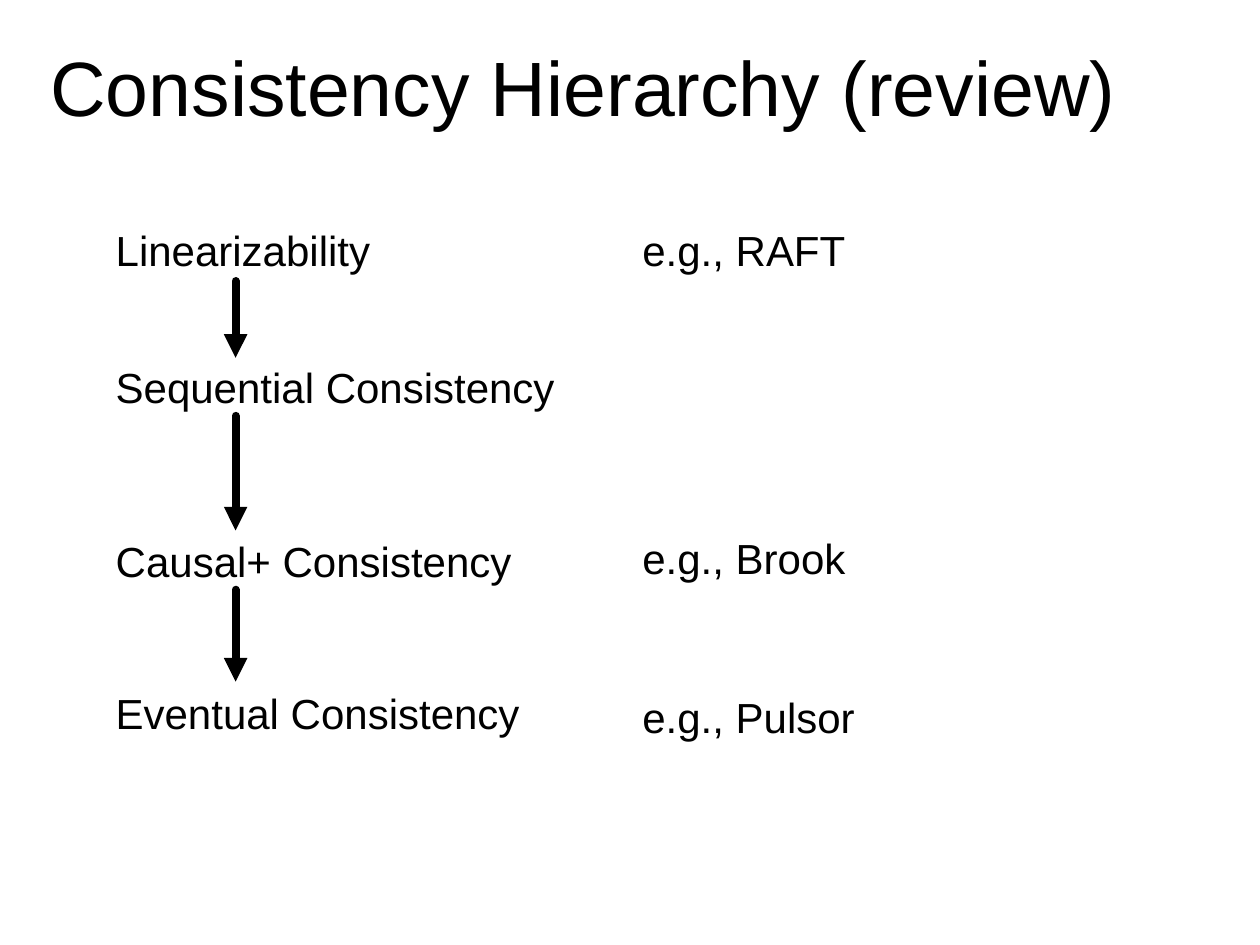
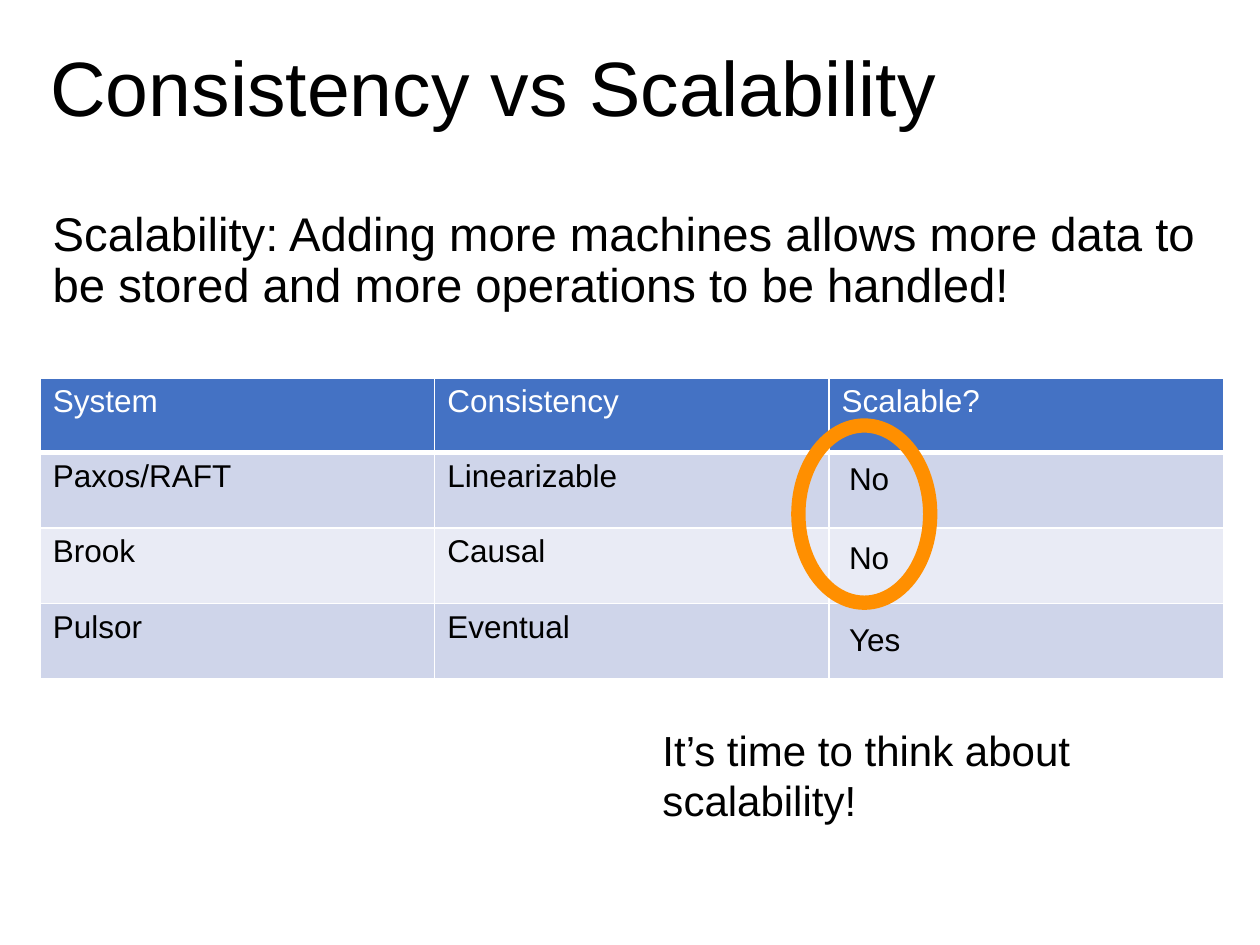
from lxml.etree import SubElement
from pptx import Presentation
from pptx.dml.color import RGBColor
from pptx.enum.shapes import MSO_CONNECTOR as CONNECTOR, MSO_SHAPE as SHAPE
from pptx.enum.text import MSO_ANCHOR as ANCHOR, MSO_AUTO_SIZE as AUTO_SIZE, PP_ALIGN as ALIGN
from pptx.oxml.ns import qn
from pptx.util import Inches, Pt

FONT = "Arial"
COLORS = {
    "text": "000000",
    "paper": "FFFFFF",
    "header": "4472C4",
    "odd_row": "CFD5EA",
    "even_row": "E9EBF5",
    "ring": "FF8F00",
}
TITLE_ONLY = 5


def color(name):
    return RGBColor.from_string(COLORS[name])


def box(left, top, width, height):
    return [Inches(value) for value in (left, top, width, height)]


def fill(target, name):
    target.fill.solid()
    target.fill.fore_color.rgb = color(name)


def write(frame, text, size, ink="text"):
    frame.text = text
    paragraph = frame.paragraphs[0]
    paragraph.alignment = ALIGN.LEFT
    paragraph.font.name = FONT
    paragraph.font.size = Pt(size)
    paragraph.font.color.rgb = color(ink)
    return paragraph


def add_titled_slide(deck, text):
    slide = deck.slides.add_slide(deck.slide_layouts[TITLE_ONLY])
    title = slide.shapes.title
    title.left, title.top, title.width, title.height = box(0.3, 0, 9.4, 1.45)
    frame = title.text_frame
    write(frame, text, 44).line_spacing = 0.9
    frame.vertical_anchor = ANCHOR.MIDDLE
    frame.auto_size = AUTO_SIZE.NONE
    return slide


def add_label(slide, text, left, top, width, height, size):
    """One line of text that does not wrap."""
    frame = slide.shapes.add_textbox(*box(left, top, width, height)).text_frame
    frame.word_wrap = False
    frame.auto_size = AUTO_SIZE.SHAPE_TO_FIT_TEXT
    write(frame, text, size)


def add_down_arrow(slide, x, top, bottom):
    arrow = slide.shapes.add_connector(
        CONNECTOR.STRAIGHT, Inches(x), Inches(top), Inches(x), Inches(bottom))
    arrow.line.color.rgb = color("text")
    arrow.line.width = Pt(4.5)
    properties = arrow._element.spPr
    line = properties.find(qn("a:ln"))
    line.set("cap", "rnd")
    SubElement(line, qn("a:tailEnd"), type="triangle")
    SubElement(properties, qn("a:effectLst"))


def add_plain_shape(slide, kind, position, fill_name):
    shape = slide.shapes.add_shape(kind, *box(*position))
    shape.shadow.inherit = False
    shape.line.fill.background()
    fill(shape, fill_name)
    return shape


def border_cell(cell, top, bottom):
    properties = cell._tc.get_or_add_tcPr()
    for side, points in (("L", 1), ("R", 1), ("T", top), ("B", bottom)):
        line = SubElement(properties, qn(f"a:ln{side}"), w=str(Pt(points)))
        solid = SubElement(line, qn("a:solidFill"))
        SubElement(solid, qn("a:srgbClr"), val=COLORS["paper"])


def add_systems_table(slide, rows):
    table = slide.shapes.add_table(len(rows), len(rows[0]), *box(0.32, 3, 9.39, 2.39)).table
    for column in table.columns:
        column.width = Inches(3.13)
    for index, texts in enumerate(rows):
        is_header = index == 0
        table.rows[index].height = Inches(0.59 if is_header else 0.6)
        row_fill = "header" if is_header else ("even_row", "odd_row")[index % 2]
        for column, text in enumerate(texts):
            cell = table.cell(index, column)
            border_cell(cell, 3 if index == 1 else 1, 3 if is_header else 1)
            fill(cell, row_fill)
            paragraph = write(cell.text_frame, text, 18, "paper" if is_header else "text")
            paragraph.font.bold = False


def build_hierarchy(deck):
    slide = add_titled_slide(deck, "Consistency Hierarchy (review)")

    # Consistency levels, strongest first
    for text, top, width in (
        ("Linearizability", 1.73, 2.33),
        ("Sequential Consistency", 2.82, 3.86),
        ("Causal+ Consistency", 4.2, 3.49),
        ("Eventual Consistency", 5.41, 3.56),
    ):
        add_label(slide, text, 0.82, top, width, 0.5, 24)

    # Arrows from each level to the next weaker one
    for top, bottom in ((2.23, 2.84), (3.3, 4.21), (4.68, 5.41)):
        add_down_arrow(slide, 1.87, top, bottom)

    # Example systems
    for text, top, width in (
        ("e.g., RAFT", 1.73, 1.82),
        ("e.g., Brook", 4.18, 1.95),
        ("e.g., Pulsor", 5.44, 2.25),
    ):
        add_label(slide, text, 5, top, width, 0.5, 24)


def build_scalability(deck):
    slide = add_titled_slide(deck, "Consistency vs Scalability")

    add_systems_table(slide, [
        ("System", "Consistency", "Scalable?"),
        ("Paxos/RAFT", "Linearizable", ""),
        ("Brook", "Causal", ""),
        ("Pulsor", "Eventual", ""),
    ])

    # Definition
    definition = slide.shapes.add_textbox(*box(0.32, 1.62, 9.4, 5.13)).text_frame
    definition.word_wrap = True
    paragraph = write(
        definition,
        "Scalability: Adding more machines allows more data to be stored "
        "and more operations to be handled!", 27)
    paragraph.line_spacing = 0.9
    paragraph.space_before = Pt(10)

    # Ring around the systems that do not scale
    ring = add_plain_shape(slide, SHAPE.DONUT, (6.28, 3.32, 1.16, 1.52), "ring")
    ring.adjustments[0] = 0.098

    # Conclusion
    conclusion = add_plain_shape(slide, SHAPE.RECTANGLE, (5.16, 5.7, 3.64, 0.91), "paper")
    conclusion.text_frame.word_wrap = True
    conclusion.text_frame.vertical_anchor = ANCHOR.TOP
    write(conclusion.text_frame, "It’s time to think about scalability!", 24)

    # Answers over the last column
    for text, top, width in (("No", 3.59, 0.53), ("No", 4.22, 0.53), ("Yes", 4.87, 0.61)):
        add_label(slide, text, 6.64, top, width, 0.4, 18)


def main():
    deck = Presentation()
    deck.slide_width, deck.slide_height = Inches(10), Inches(7.5)
    build_hierarchy(deck)
    build_scalability(deck)
    deck.save("out.pptx")


if __name__ == "__main__":
    main()
